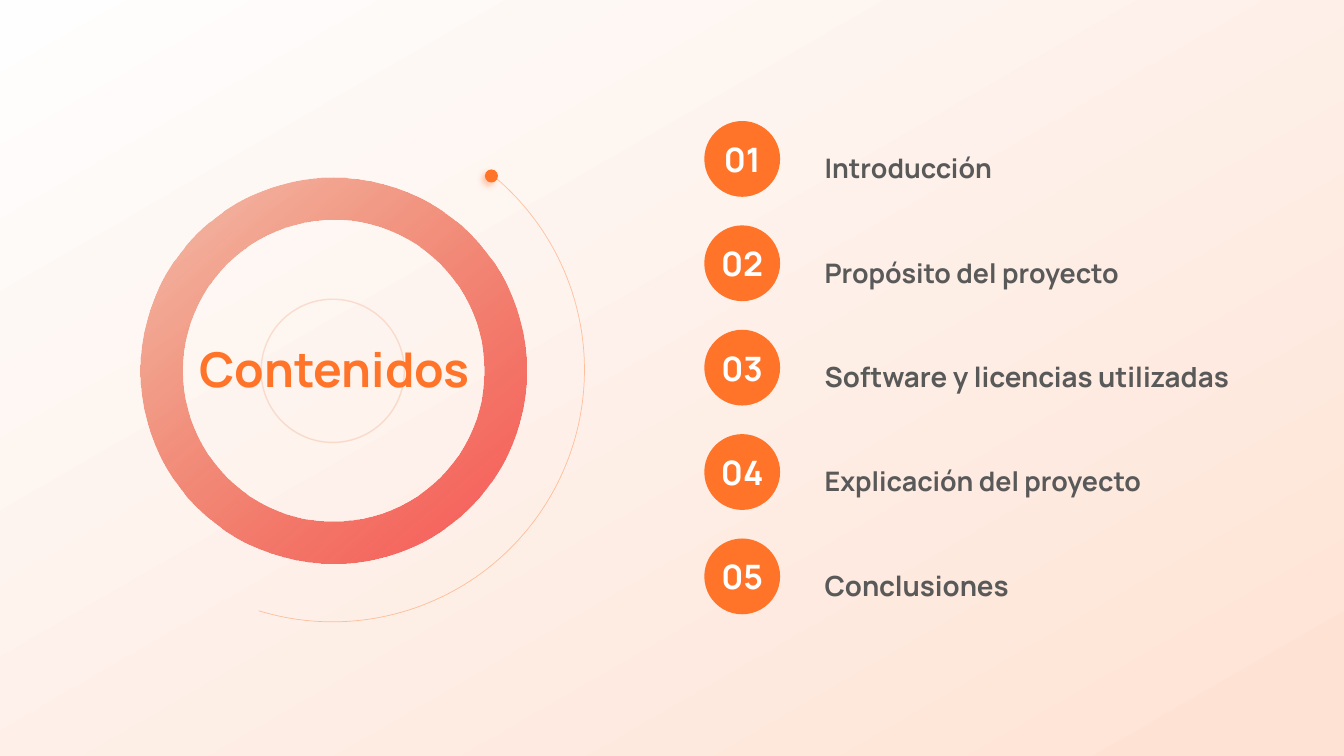
import pptx
import pptx.dml.color
import pptx.enum.shapes
import pptx.enum.text
import pptx.oxml
import pptx.oxml.ns
import pptx.util

Cm = pptx.util.Cm
Pt = pptx.util.Pt
RGBColor = pptx.dml.color.RGBColor
MSO_SHAPE = pptx.enum.shapes.MSO_SHAPE
PP_ALIGN = pptx.enum.text.PP_ALIGN
MSO_ANCHOR = pptx.enum.text.MSO_ANCHOR
qn = pptx.oxml.ns.qn

ORANGE = RGBColor(0xFF, 0x74, 0x29)
RUST = RGBColor(0xDE, 0x4E, 0x00)
RED = RGBColor(0xF8, 0x49, 0x49)
BRICK = RGBColor(0xDE, 0x35, 0x00)
PEACH = RGBColor(0xFF, 0xE3, 0xD4)
WHITE = RGBColor(0xFF, 0xFF, 0xFF)
GREY = RGBColor(0x59, 0x59, 0x59)

WIDTH, HEIGHT = 33.87, 19.05
SECTIONS = [
    ("Introducción", 19.2),
    ("Propósito del proyecto", 19.2),
    ("Software y licencias utilizadas", 19.8),
    ("Explicación del proyecto", 19.2),
    ("Conclusiones", 19.8),
]
PITCH = 2.63


class Deck:
    """Holds the font and the current slide; lengths are in centimetres."""

    font = "Manrope"

    def __init__(self, prs):
        self.s = prs.slides.add_slide(prs.slide_layouts[6])

    def set_alpha(self, color, percent):
        alpha = pptx.oxml.parse_xml(
            f'<a:alpha {pptx.oxml.ns.nsdecls("a")} val="{percent * 1000}"/>')
        color.append(alpha)

    def gradient(self, fill, element, angle, stops):
        """Two stops of (colour, opacity); the angle runs clockwise."""
        fill.gradient()
        fill.gradient_angle = 360 - angle
        for position, (stop, (rgb, _)) in enumerate(zip(fill.gradient_stops, stops)):
            stop.position = position
            stop.color.rgb = rgb
        colors = list(element.iter(qn("a:srgbClr")))
        for color, (_, opacity) in zip(colors, stops):
            self.set_alpha(color, opacity)

    def background(self, angle, stops):
        fill = self.s.background.fill
        self.gradient(fill, self.s.element.find(".//" + qn("p:bg")), angle, stops)

    def shape(self, kind, x, y, w, h, fill=None):
        sp = self.s.shapes.add_shape(kind, Cm(x), Cm(y), Cm(w), Cm(h))
        sp.shadow.inherit = False
        sp.line.fill.background()
        if fill is None:
            sp.fill.background()
        else:
            sp.fill.solid()
            sp.fill.fore_color.rgb = fill
        return sp

    def outline(self, sp, rgb, width, opacity):
        sp.line.color.rgb = rgb
        sp.line.width = Pt(width)
        self.set_alpha(sp.element.find(".//" + qn("a:ln")).find(".//" + qn("a:srgbClr")), opacity)

    def glow_shadow(self, sp, rgb, opacity, blur, distance, angle):
        shadow = pptx.oxml.parse_xml(
            f'<a:outerShdw {pptx.oxml.ns.nsdecls("a")} blurRad="{Pt(blur)}" '
            f'dist="{Pt(distance)}" dir="{angle * 60000}" algn="ctr" rotWithShape="0">'
            f'<a:srgbClr val="{rgb}"/></a:outerShdw>')
        self.set_alpha(shadow[0], opacity)
        sp.element.find(".//" + qn("a:effectLst")).append(shadow)

    def label(self, sp, text, size, rgb, align, anchor, wrap=True):
        tf = sp.text_frame
        tf.margin_left = tf.margin_right = tf.margin_top = tf.margin_bottom = 0
        tf.word_wrap = wrap
        tf.vertical_anchor = anchor
        tf.text = text
        p = tf.paragraphs[0]
        p.alignment = align
        r = p.runs[0]
        r.font.name = self.font
        r.font.size = Pt(size)
        r.font.bold = True
        r.font.color.rgb = rgb

    def text(self, x, y, w, h, text, size, rgb, align, anchor):
        sp = self.s.shapes.add_textbox(Cm(x), Cm(y), Cm(w), Cm(h))
        self.label(sp, text, size, rgb, align, anchor)


def main():
    prs = pptx.Presentation()
    prs.slide_width, prs.slide_height = Cm(WIDTH), Cm(HEIGHT)
    deck = Deck(prs)

    # Background wash
    deck.background(240, [(PEACH, 50), (WHITE, 100)])
    wash = deck.shape(MSO_SHAPE.RECTANGLE, 0, 0, WIDTH, HEIGHT)
    deck.gradient(wash.fill, wash.element, 240, [(PEACH, 75), (WHITE, 100)])

    # Rings around the title
    circle = deck.shape(MSO_SHAPE.OVAL, 6.58, 7.54, 3.61, 3.61)
    deck.outline(circle, RUST, 1, 15)
    arc = deck.shape(MSO_SHAPE.ARC, 2.03, 2.97, 12.7, 12.7)
    # Arc angles are held in units of 100000/60000 of a degree
    arc.adjustments[0] = 309 * 0.6
    arc.adjustments[1] = 107 * 0.6
    deck.outline(arc, ORANGE, 0.5, 40)
    dot = deck.shape(MSO_SHAPE.OVAL, 12.22, 4.27, 0.33, 0.33, ORANGE)
    deck.glow_shadow(dot, ORANGE, 34, 4, 3, 135)
    ring = deck.shape(MSO_SHAPE.DONUT, 3.53, 4.47, 9.73, 9.73)
    ring.adjustments[0] = 0.11
    deck.gradient(ring.fill, ring.element, 229, [(RED, 90), (BRICK, 30)])

    # Title
    deck.text(3.3, 8.38, 10.26, 1.8, "Contenidos", 34.2, ORANGE,
              PP_ALIGN.CENTER, MSO_ANCHOR.MIDDLE)

    # Numbered sections
    for i, (name, size) in enumerate(SECTIONS):
        badge = deck.shape(MSO_SHAPE.OVAL, 17.75, 3.05 + i * PITCH, 1.91, 1.91, ORANGE)
        deck.label(badge, f"{i + 1:02d}", 24, WHITE, PP_ALIGN.CENTER,
                   MSO_ANCHOR.MIDDLE, wrap=False)
        deck.text(20.78, 3.62 + i * PITCH, 11.68, 1.02, name, size, GREY,
                  PP_ALIGN.LEFT, MSO_ANCHOR.BOTTOM)

    prs.save("out.pptx")


if __name__ == "__main__":
    main()
